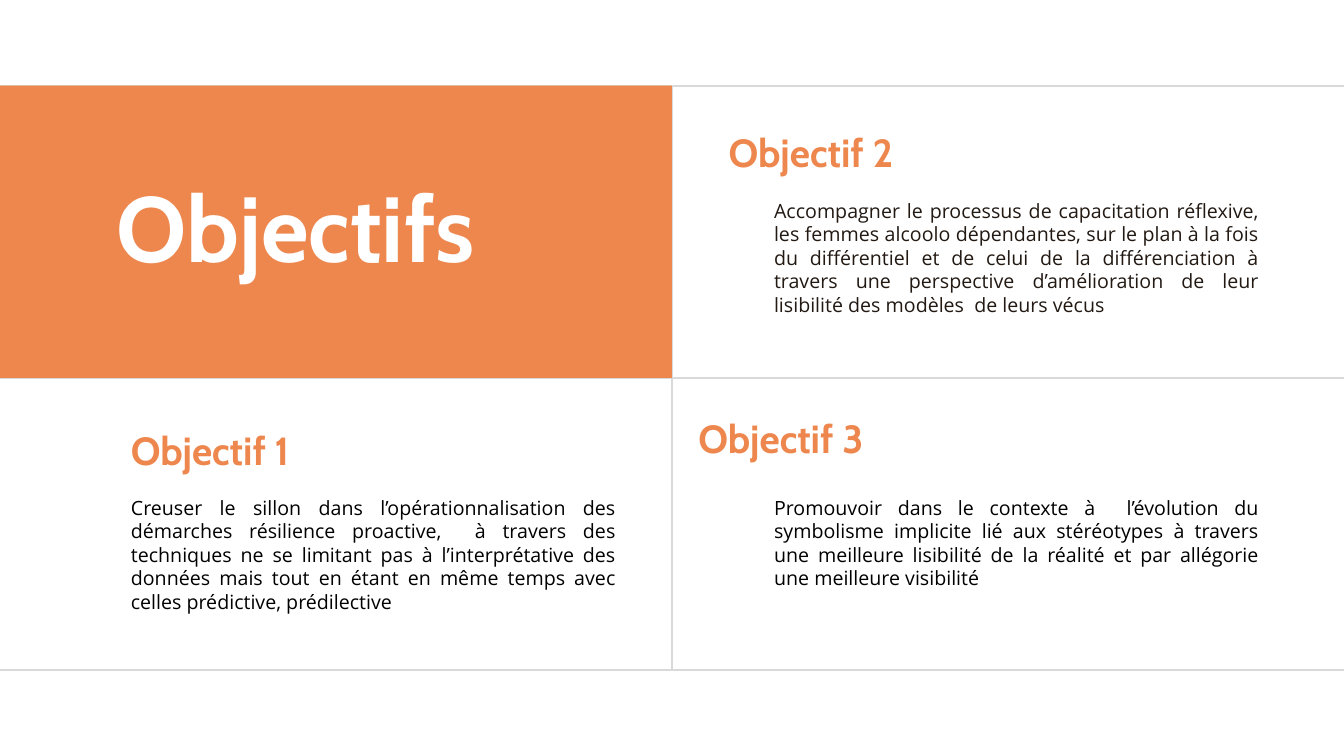
"""Builds the slide of three objectives in a two-by-two grid."""
from pptx import Presentation
from pptx.dml.color import RGBColor
from pptx.enum import shapes, text
from pptx.oxml.ns import qn
from pptx.util import Pt

COLORS = {"orange": "ED874E", "white": "FFFFFF", "brown": "221913",
          "black": "000000", "grid": "D9D9D9"}
STYLES = {
    "title": {"font": "Cabin", "size": 66, "bold": True},
    "heading": {"font": "Cabin", "size": 28, "bold": True},
    "body": {"font": "Open Sans", "size": 14, "bold": False},
}
BODY_LINE = 16.8
WIDTH, HEIGHT = 960, 540
MIDDLE = WIDTH / 2
TOP, CENTER, BOTTOM = 61.2, 270, 478.8

GRID_LINES = [
    (0, TOP, WIDTH, TOP),
    (0, BOTTOM, WIDTH, BOTTOM),
    (MIDDLE, BOTTOM, MIDDLE, TOP),
    (0, CENTER, WIDTH, CENTER),
]
TEXTS = [
    ("title", "white", (76.3, 118.1, 353.5, 87.1), "Objectifs"),
    ("heading", "orange", (513.4, 87.8, 388.1, 41), "Objectif 2"),
    ("body", "brown", (545.8, 138.2, 360.7, 91.2),
     "Accompagner le processus de capacitation réflexive, les femmes alcoolo "
     "dépendantes, sur le plan à la fois du différentiel et de celui de la "
     "différenciation à travers une perspective d’amélioration de leur "
     "lisibilité des modèles  de leurs vécus"),
    ("heading", "orange", (491.8, 292.3, 355.7, 41), "Objectif 3"),
    ("heading", "orange", (86.4, 301, 355.7, 41), "Objectif 1"),
    ("body", "black", (86.4, 350.6, 360.7, 91.2),
     "Creuser le sillon dans l’opérationnalisation des démarches résilience "
     "proactive,  à travers des techniques ne se limitant pas à "
     "l’interprétative des données mais tout en étant en même temps avec "
     "celles prédictive, prédilective"),
    ("body", "black", (545.8, 350.6, 360.7, 74.4),
     "Promouvoir dans le contexte à  l’évolution du symbolisme implicite lié "
     "aux stéréotypes à travers une meilleure lisibilité de la réalité et par "
     "allégorie une meilleure visibilité"),
]


def color(name):
    return RGBColor.from_string(COLORS[name])


def add_grid_line(slide, ends):
    line = slide.shapes.add_connector(
        shapes.MSO_CONNECTOR.STRAIGHT, *map(Pt, ends))
    line.line.color.rgb = color("grid")
    line.line.width = Pt(1.5)
    properties = line._element.spPr
    properties.append(properties.makeelement(qn("a:effectLst"), {}))


def add_title_panel(slide):
    panel = slide.shapes.add_shape(
        shapes.MSO_SHAPE.RECTANGLE, 0, Pt(TOP), Pt(MIDDLE), Pt(CENTER - TOP))
    panel.shadow.inherit = False
    panel.fill.solid()
    panel.fill.fore_color.rgb = color("orange")
    panel.line.fill.background()


def add_text(slide, style_name, color_name, box, wording):
    style = STYLES[style_name]
    frame = slide.shapes.add_textbox(*map(Pt, box)).text_frame
    frame.word_wrap = True
    frame.auto_size = text.MSO_AUTO_SIZE.SHAPE_TO_FIT_TEXT
    paragraph = frame.paragraphs[0]
    if style_name == "body":
        paragraph.alignment = text.PP_ALIGN.JUSTIFY
        paragraph.line_spacing = Pt(BODY_LINE)
    run = paragraph.add_run()
    run.text = wording
    run.font.name = style["font"]
    run.font.size = Pt(style["size"])
    run.font.bold = style["bold"]
    run.font.color.rgb = color(color_name)


def main():
    presentation = Presentation()
    presentation.slide_width = Pt(WIDTH)
    presentation.slide_height = Pt(HEIGHT)
    slide = presentation.slides.add_slide(presentation.slide_layouts[6])
    for ends in GRID_LINES:
        add_grid_line(slide, ends)
    add_title_panel(slide)
    for entry in TEXTS:
        add_text(slide, *entry)
    presentation.save("out.pptx")


if __name__ == "__main__":
    main()
